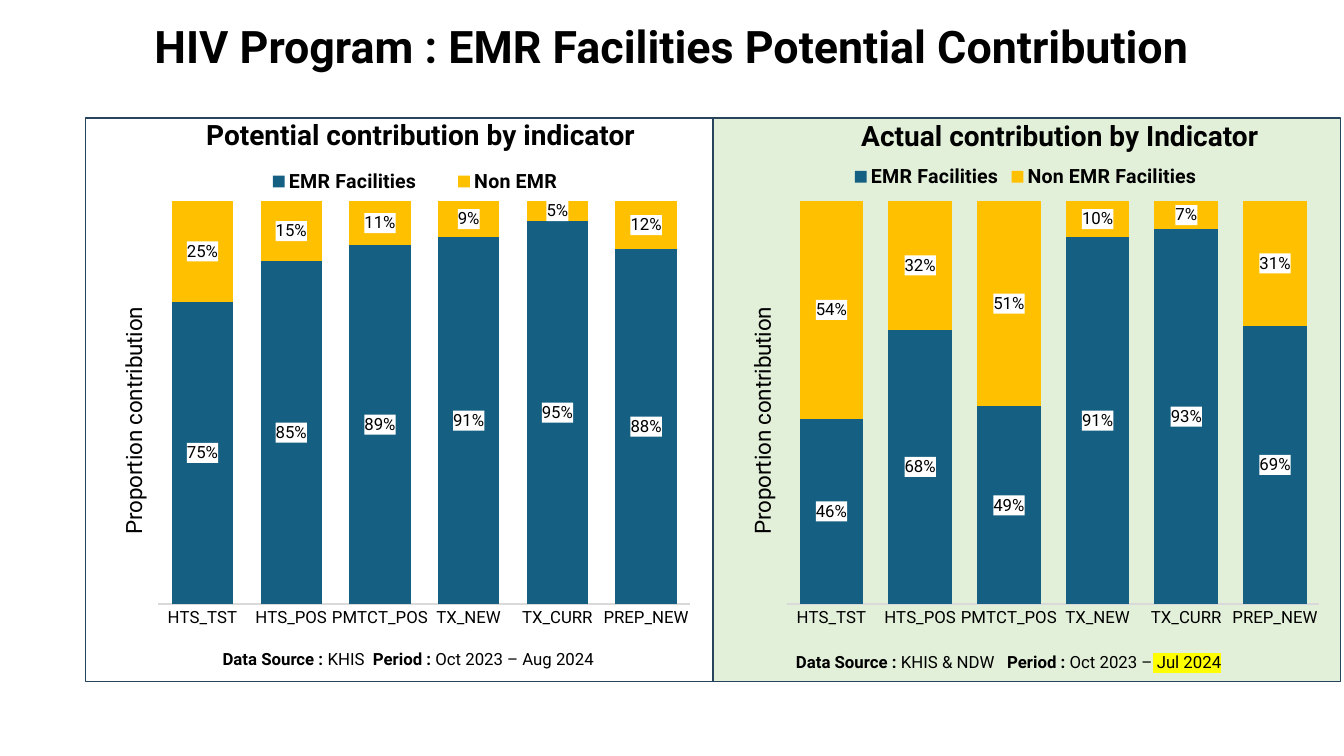
from dataclasses import dataclass
from typing import Optional

from lxml.etree import SubElement
from pptx import Presentation
from pptx.chart.data import CategoryChartData
from pptx.dml.color import RGBColor
from pptx.enum.chart import (XL_CHART_TYPE, XL_LABEL_POSITION, XL_LEGEND_POSITION,
                             XL_TICK_LABEL_POSITION, XL_TICK_MARK)
from pptx.enum.shapes import MSO_SHAPE
from pptx.enum.text import MSO_ANCHOR, PP_ALIGN
from pptx.oxml import parse_xml
from pptx.oxml.ns import nsdecls, qn
from pptx.util import Cm, Pt

FONT = "Roboto"
BLACK, WHITE, YELLOW = "000000", "FFFFFF", "FFFF00"
BLUE, AMBER, FRAME, AXIS_GREY, PALE_GREEN = "156082", "FFC000", "28445D", "D9D9D9", "E2F0D9"
INDICATORS = ["HTS_TST", "HTS_POS", "PMTCT_POS", "TX_NEW", "TX_CURR", "PREP_NEW"]
PANEL_TOP, PANEL_WIDTH, PANEL_HEIGHT = 2.97, 15.82, 14.2
CHART_TOP, CHART_WIDTH, CHART_HEIGHT = 3.84, 15.42, 12.24


@dataclass
class Span:
    text: str
    bold: bool = False
    highlight: Optional[str] = None


@dataclass
class Place:
    """Position and size in centimetres."""
    left: float
    top: float
    width: float
    height: float

    def lengths(self) -> tuple:
        return Cm(self.left), Cm(self.top), Cm(self.width), Cm(self.height)


@dataclass
class Panel:
    left: float
    fill: Optional[str]
    heading: str
    heading_place: Place
    source: list
    source_place: Place
    source_align: PP_ALIGN
    chart_left: float
    gap: int
    legend: tuple  # x, y, width, height as fractions of the chart
    series: dict


PANELS = [
    Panel(17.96, PALE_GREEN, "Actual contribution by Indicator",
          Place(19.61, 2.87, 14.2, 1.12),
          [Span("Data Source : ", True), Span("KHIS & NDW   "), Span("Period :", True),
           Span(" Oct 2023 –"), Span(" Jul 2024", highlight=YELLOW)],
          Place(19.81, 16.31, 13.9, 0.76), PP_ALIGN.LEFT, 18.14, 39,
          (0.21, 0.02, 0.58, 0.06),
          {"EMR Facilities": [0.46, 0.68, 0.49, 0.91, 0.93, 0.69],
           "Non EMR Facilities": [0.54, 0.32, 0.51, 0.1, 0.07, 0.31]}),
    Panel(2.16, None, "Potential contribution by indicator",
          Place(4.39, 2.84, 12.42, 1.12),
          [Span("Data Source : ", True), Span("KHIS  "), Span("Period :", True),
           Span(" Oct 2023 – Aug 2024")],
          Place(3.89, 16.21, 12.8, 0.76), PP_ALIGN.CENTER, 2.29, 45,
          (0.24, 0.03, 0.58, 0.06),
          {"EMR Facilities": [0.75, 0.85, 0.89, 0.91, 0.95, 0.88],
           "Non EMR": [0.25, 0.15, 0.11, 0.09, 0.05, 0.12]}),
]


def color(value: str) -> RGBColor:
    return RGBColor.from_string(value)


def style_font(font, size: float, bold: bool = False, name: str = FONT) -> None:
    font.name, font.size, font.bold = name, Pt(size), bold
    font.color.rgb = color(BLACK)


def add_text(page, place: Place, spans: list, size: float, align: PP_ALIGN):
    box = page.shapes.add_textbox(*place.lengths())
    frame = box.text_frame
    frame.word_wrap = True
    para = frame.paragraphs[0]
    para.alignment = align
    for span in spans:
        run = para.add_run()
        run.text = span.text
        style_font(run.font, size, span.bold)
        if span.highlight:
            run.font._element.find(qn("a:solidFill")).addnext(parse_xml(
                f'<a:highlight {nsdecls("a")}><a:srgbClr val="{span.highlight}"/></a:highlight>'))
    return box


def manual_layout(x: float, y: float, size: Optional[tuple] = None, inner: bool = False):
    layout = parse_xml(f'<c:layout {nsdecls("c")}><c:manualLayout/></c:layout>')
    parts = [("layoutTarget", "inner")] if inner else []
    parts += [("xMode", "edge"), ("yMode", "edge"), ("x", x), ("y", y)]
    if size:
        parts += zip("wh", size)
    for tag, value in parts:
        SubElement(layout[0], qn(f"c:{tag}")).set("val", str(value))
    return layout


def style_axes(chart) -> None:
    categories = chart.category_axis
    categories.major_tick_mark = XL_TICK_MARK.NONE
    categories.tick_label_position = XL_TICK_LABEL_POSITION.NEXT_TO_AXIS
    categories.format.line.color.rgb = color(AXIS_GREY)
    categories.format.line.width = Pt(0.75)
    style_font(categories.tick_labels.font, 12)

    values = chart.value_axis
    values.minimum_scale, values.maximum_scale = 0, 1
    values.has_major_gridlines = False
    values.tick_labels.number_format = "0%"
    values.tick_labels.number_format_is_linked = False
    values.visible = False
    title = values.axis_title
    run = title.text_frame.paragraphs[0].add_run()
    run.text = "Proportion contribution"
    style_font(run.font, 16)
    body = title.text_frame._txBody.find(qn("a:bodyPr"))
    body.set("rot", "-5400000")
    body.set("vert", "horz")
    element = title._element
    for old in element.findall(qn("c:layout")):
        element.remove(old)
    element.find(qn("c:tx")).addnext(manual_layout(0.04, 0.31))


def style_series(series, fill: str) -> None:
    series.format.fill.solid()
    series.format.fill.fore_color.rgb = color(fill)
    labels = series.data_labels
    labels.show_value = True
    labels.position = XL_LABEL_POSITION.CENTER
    labels.number_format = "0%"
    labels.number_format_is_linked = False
    style_font(labels.font, 12)
    labels._element.find(qn("c:numFmt")).addnext(parse_xml(
        f'<c:spPr {nsdecls("c", "a")}><a:solidFill><a:srgbClr val="{WHITE}"/>'
        '</a:solidFill></c:spPr>'))


def add_contribution_chart(page, panel: Panel) -> None:
    data = CategoryChartData(number_format="0%")
    data.categories = INDICATORS
    for name, shares in panel.series.items():
        data.add_series(name, shares)
    place = Place(panel.chart_left, CHART_TOP, CHART_WIDTH, CHART_HEIGHT)
    chart = page.shapes.add_chart(XL_CHART_TYPE.COLUMN_STACKED, *place.lengths(), data).chart
    style_font(chart.font, 12, True, "Times New Roman")
    chart.has_title = False
    chart.has_legend = True
    legend = chart.legend
    legend.position = XL_LEGEND_POSITION.TOP
    legend.include_in_layout = False
    style_font(legend.font, 14, True)
    for old in legend._element.findall(qn("c:layout")):
        legend._element.remove(old)
    legend._element.find(qn("c:legendPos")).addnext(
        manual_layout(*panel.legend[:2], panel.legend[2:]))

    style_axes(chart)
    plot = chart.plots[0]
    plot.gap_width, plot.overlap, plot.vary_by_categories = panel.gap, 100, False
    for series, fill in zip(plot.series, (BLUE, AMBER)):
        style_series(series, fill)
    area = chart._chartSpace.chart.plotArea
    for old in area.findall(qn("c:layout")):
        area.remove(old)
    area.insert(0, manual_layout(0.11, 0.1, (0.87, 0.83), inner=True))


def add_panel(page, panel: Panel) -> None:
    place = Place(panel.left, PANEL_TOP, PANEL_WIDTH, PANEL_HEIGHT)
    frame = page.shapes.add_shape(MSO_SHAPE.RECTANGLE, *place.lengths())
    frame.shadow.inherit = False
    frame.line.color.rgb = color(FRAME)
    frame.line.width = Pt(1)
    if panel.fill:
        frame.fill.solid()
        frame.fill.fore_color.rgb = color(panel.fill)
    else:
        frame.fill.background()
    add_text(page, panel.heading_place, [Span(panel.heading, True)], 20, PP_ALIGN.CENTER)
    add_text(page, panel.source_place, panel.source, 12, panel.source_align)
    add_contribution_chart(page, panel)


def main() -> None:
    deck = Presentation()
    deck.slide_width, deck.slide_height = Cm(33.87), Cm(19.05)
    page = deck.slides.add_slide(deck.slide_layouts[6])
    title = add_text(page, Place(0, 0.48, 33.87, 1.52),
                     [Span("HIV Program : EMR Facilities Potential Contribution", True)],
                     32, PP_ALIGN.CENTER)
    title.text_frame.vertical_anchor = MSO_ANCHOR.MIDDLE
    title.text_frame.paragraphs[0].line_spacing = 0.9
    for panel in PANELS:
        add_panel(page, panel)
    deck.save("out.pptx")


if __name__ == "__main__":
    main()
